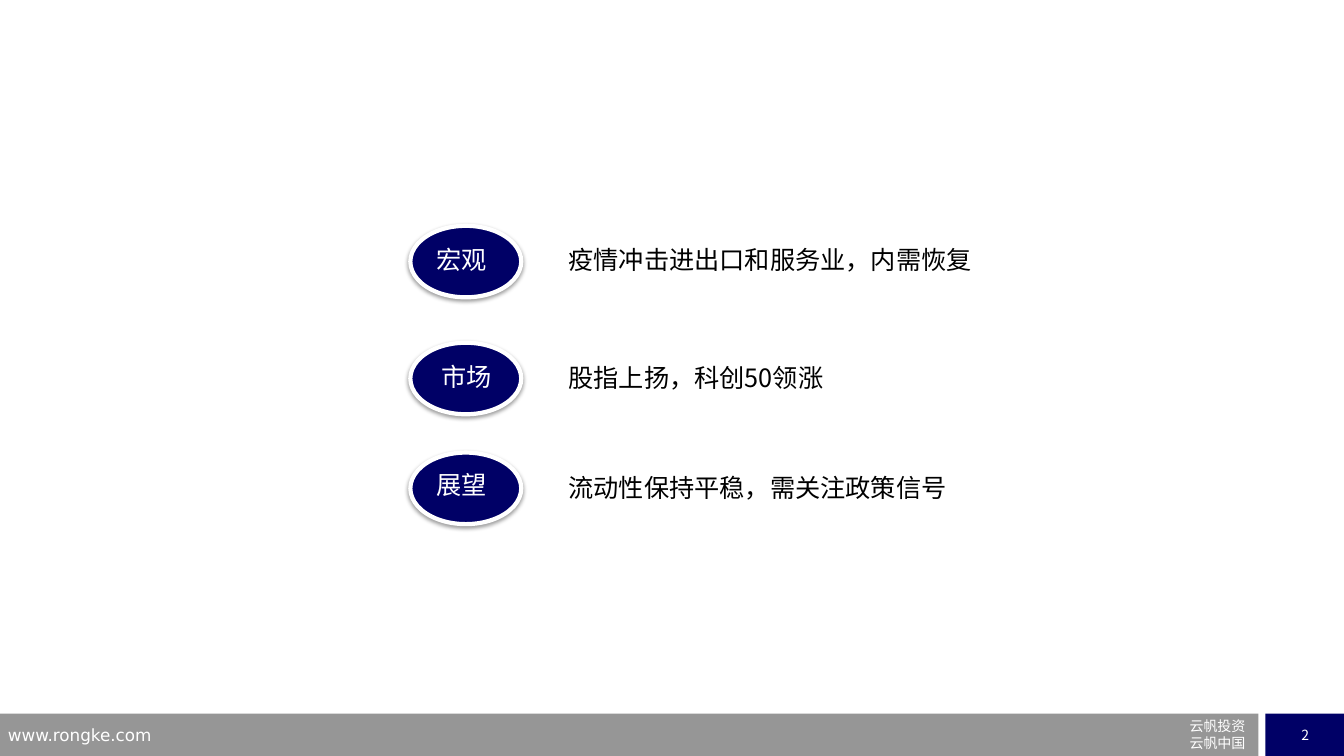
from lxml import etree
from pptx import Presentation
from pptx.dml.color import RGBColor
from pptx.enum.shapes import MSO_SHAPE
from pptx.enum.text import MSO_ANCHOR, MSO_AUTO_SIZE, PP_ALIGN
from pptx.oxml import parse_xml
from pptx.oxml.ns import nsdecls, qn
from pptx.util import Inches, Pt

RECTANGLE, OVAL = MSO_SHAPE.RECTANGLE, MSO_SHAPE.OVAL
LEFT, CENTER, RIGHT = PP_ALIGN.LEFT, PP_ALIGN.CENTER, PP_ALIGN.RIGHT
MIDDLE = MSO_ANCHOR.MIDDLE
FIT_TEXT = MSO_AUTO_SIZE.SHAPE_TO_FIT_TEXT
NAVY, GREY, WHITE, BLACK = "000066", "969696", "FFFFFF", "000000"
CJK, SANS = "Noto Sans CJK SC", "DejaVu Sans"
SHADOW = (
    f'<a:effectLst {nsdecls("a")}>'
    '<a:outerShdw blurRad="39370" dist="20320" dir="5400000" rotWithShape="0">'
    '<a:srgbClr val="000000"><a:alpha val="38000"/></a:srgbClr>'
    '</a:outerShdw></a:effectLst>'
)

prs = Presentation()
prs.slide_width, prs.slide_height = Inches(13.33), Inches(7.5)
slide = prs.slides.add_slide(prs.slide_layouts[6])


def add_block(kind, left, top, width, height, fill):
    block = slide.shapes.add_shape(
        kind, Inches(left), Inches(top), Inches(width), Inches(height))
    block.shadow.inherit = False
    block.fill.solid()
    block.fill.fore_color.rgb = RGBColor.from_string(fill)
    block.line.fill.background()
    return block


def write(frame, lines, size, font, color, align=LEFT):
    frame.text = "\n".join(lines)
    for paragraph in frame.paragraphs:
        paragraph.alignment = align
        paragraph.font.size = Pt(size)
        paragraph.font.color.rgb = RGBColor.from_string(color)
        paragraph.font.name = font
        defaults = paragraph._p.pPr.find(qn("a:defRPr"))
        etree.SubElement(defaults, qn("a:ea")).set("typeface", font)


# Footer bar and page number
add_block(RECTANGLE, 0, 7.08, 12.48, 0.42, GREY)
page_number = add_block(RECTANGLE, 12.55, 7.08, 0.79, 0.42, NAVY).text_frame
page_number.word_wrap = False
page_number.vertical_anchor = MIDDLE
write(page_number, ["2"], 10, CJK, WHITE, CENTER)

# Footer texts
for left, top, width, height, lines, size, align in [
    (-0.02, 7.14, 3.22, 0.26, ["www.rongke.com"], 12, LEFT),
    (10.95, 7.07, 1.5, 0.45, ["云帆投资", "云帆中国"], 10, RIGHT),
]:
    footer = slide.shapes.add_textbox(
        Inches(left), Inches(top), Inches(width), Inches(height)).text_frame
    footer.word_wrap = True
    write(footer, lines, size, SANS, WHITE, align)

# Agenda: oval top, label, label left and top, summary, summary top
agenda = [
    (2.24, "宏观", 4.23, 2.37, "疫情冲击进出口和服务业，内需恢复", 2.37),
    (3.4, "市场", 4.28, 3.54, "股指上扬，科创50领涨", 3.55),
    (4.49, "展望", 4.23, 4.61, "流动性保持平稳，需关注政策信号", 4.64),
]
for oval_top, label, label_left, label_top, summary, summary_top in agenda:
    oval = add_block(OVAL, 4.07, oval_top, 1.1, 0.71, NAVY)
    oval.line.color.rgb = RGBColor.from_string(WHITE)
    oval.line.width = Pt(3)
    properties = oval._element.spPr
    properties.replace(properties.find(qn("a:effectLst")), parse_xml(SHADOW))

    for text, left, top, width, color in [
        (label, label_left, label_top, 0.79, WHITE),
        (summary, 5.54, summary_top, 4.48, BLACK),
    ]:
        frame = slide.shapes.add_textbox(
            Inches(left), Inches(top), Inches(width), Inches(0.4)).text_frame
        frame.word_wrap = True
        frame.auto_size = FIT_TEXT
        write(frame, [text], 18, CJK, color)

prs.save("out.pptx")
